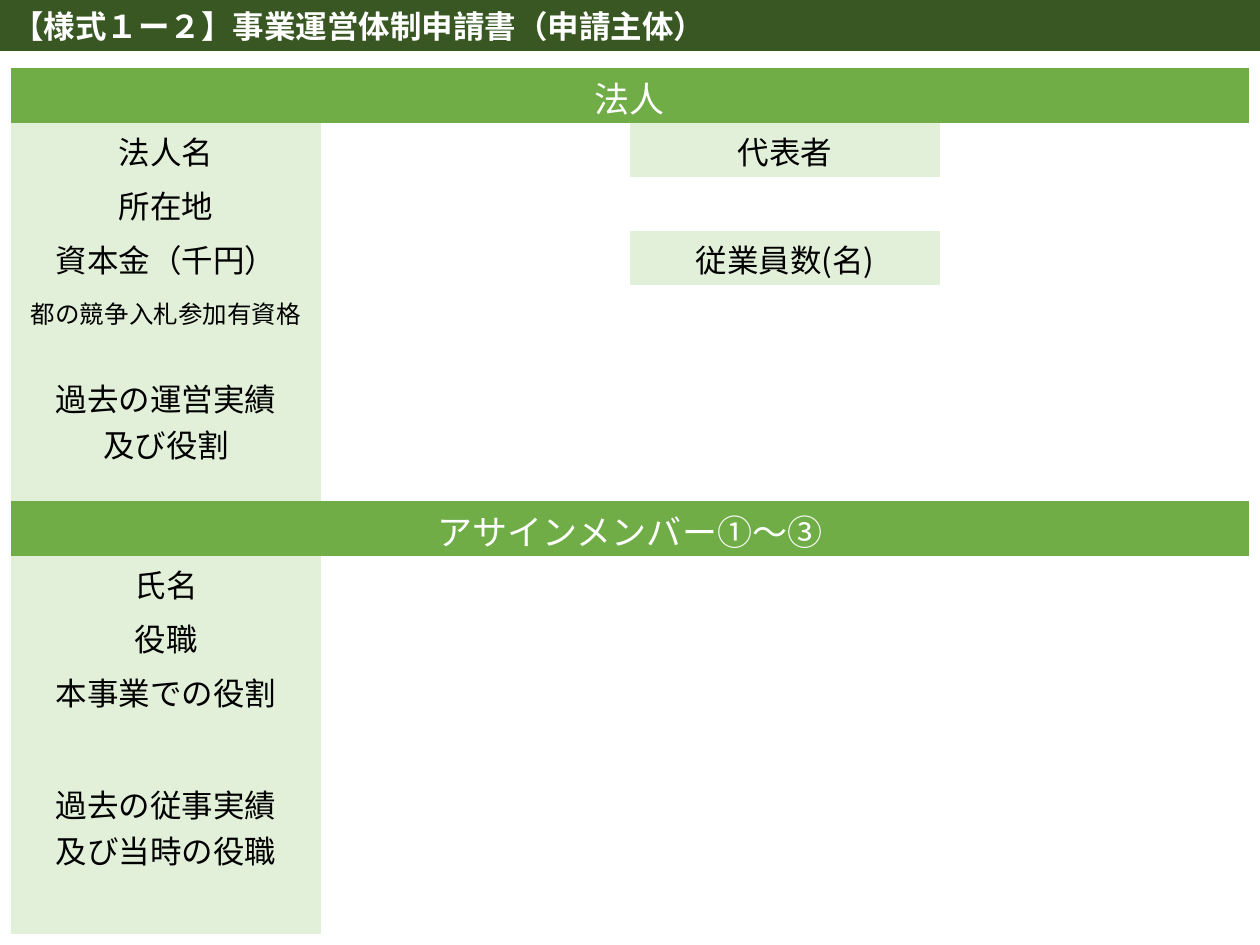
from typing import NamedTuple

from lxml import etree
from pptx import Presentation
from pptx.dml.color import RGBColor
from pptx.enum.shapes import MSO_SHAPE
from pptx.enum.text import MSO_ANCHOR as ANC, PP_ALIGN as AL
from pptx.oxml.ns import qn
from pptx.util import Emu, Pt

SCALE = 914400 / 126
DARK, GREEN, PALE = "385723", "70AD47", "E2F0D9"
WHITE, BLACK = "FFFFFF", "000000"
LATIN, CJK = "Calibri", "Noto Sans CJK JP"
NO_STYLE = "{2D5ABB26-0587-4C30-8999-92F81FD0307C}"

HEAD_H, ROW_H = 55, 54
COLS = [310, 309, 310, 309]


class Row(NamedTuple):
    label: str
    second: str = ""
    height: int = ROW_H
    size: int = 18
    merged: bool = False
    header: bool = False


def header(label: str) -> Row:
    return Row(label, height=HEAD_H, size=20, header=True)


ROWS = [
    header("法人"),
    Row("法人名", "代表者"),
    Row("所在地", merged=True),
    Row("資本金（千円）", "従業員数(名)"),
    Row("都の競争入札参加有資格", size=14, merged=True),
    Row("過去の運営実績\n及び役割", height=3 * ROW_H, merged=True),
    header("アサインメンバー①～③"),
    Row("氏名"),
    Row("役職"),
    Row("本事業での役割"),
    Row("過去の従事実績\n及び当時の役職", height=4 * ROW_H),
]


def px(n: int) -> Emu:
    return Emu(round(n * SCALE))


def rgb(value: str) -> RGBColor:
    return RGBColor.from_string(value)


def paint(obj, color: str) -> None:
    obj.fill.solid()
    obj.fill.fore_color.rgb = rgb(color)


def write(tf, text: str, align, color: str, **fmt) -> None:
    for i, line in enumerate(text.split("\n")):
        p = tf.paragraphs[0] if i == 0 else tf.add_paragraph()
        p.alignment = align
        r = p.add_run()
        r.text = line
        for name, value in fmt.items():
            setattr(r.font, name, value)
        r.font.color.rgb = rgb(color)
        etree.SubElement(r.font._element, qn("a:ea"), typeface=CJK)


def draw_title(slide, text: str) -> None:
    sp = slide.shapes.add_shape(MSO_SHAPE.RECTANGLE, 0, 0, px(1260), px(51))
    sp.shadow.inherit = False
    sp.line.fill.background()
    paint(sp, DARK)
    tf = sp.text_frame
    tf.word_wrap = True
    tf.vertical_anchor = ANC.MIDDLE
    write(tf, text, AL.LEFT, WHITE, name=LATIN, size=Pt(18), bold=True)


def fill_row(tbl, i: int, row: Row) -> None:
    tbl.rows[i].height = px(row.height)
    cells = [tbl.cell(i, c) for c in range(len(COLS))]
    margins = {"margin_top": px(4 if row.header else 2), "margin_bottom": 0,
               "vertical_anchor": ANC.MIDDLE}
    for cell in cells:
        cell.fill.background()
        for name, value in margins.items():
            setattr(cell, name, value)
    if row.header or row.merged:
        cells[0 if row.header else 1].merge(cells[-1])
    color = WHITE if row.header else BLACK
    for cell, text in ((cells[0], row.label), (cells[2], row.second)):
        if text:
            paint(cell, GREEN if row.header else PALE)
            write(cell.text_frame, text, AL.CENTER, color, name=CJK, size=Pt(row.size))


def draw_form(slide, rows: list[Row]) -> None:
    height = sum(row.height for row in rows)
    tbl = slide.shapes.add_table(len(rows), len(COLS), px(11), px(68),
                                 px(sum(COLS)), px(height)).table
    tbl.first_row = tbl.horz_banding = False
    tbl._tbl.tblPr.find(qn("a:tableStyleId")).text = NO_STYLE
    for col, width in zip(tbl.columns, COLS):
        col.width = px(width)
    for i, row in enumerate(rows):
        fill_row(tbl, i, row)


def main() -> None:
    prs = Presentation()
    prs.slide_width, prs.slide_height = px(1260), px(945)
    s = prs.slides.add_slide(prs.slide_layouts[6])
    draw_title(s, "【様式１ー２】事業運営体制申請書（申請主体）")
    draw_form(s, ROWS)
    prs.save("out.pptx")


if __name__ == "__main__":
    main()
